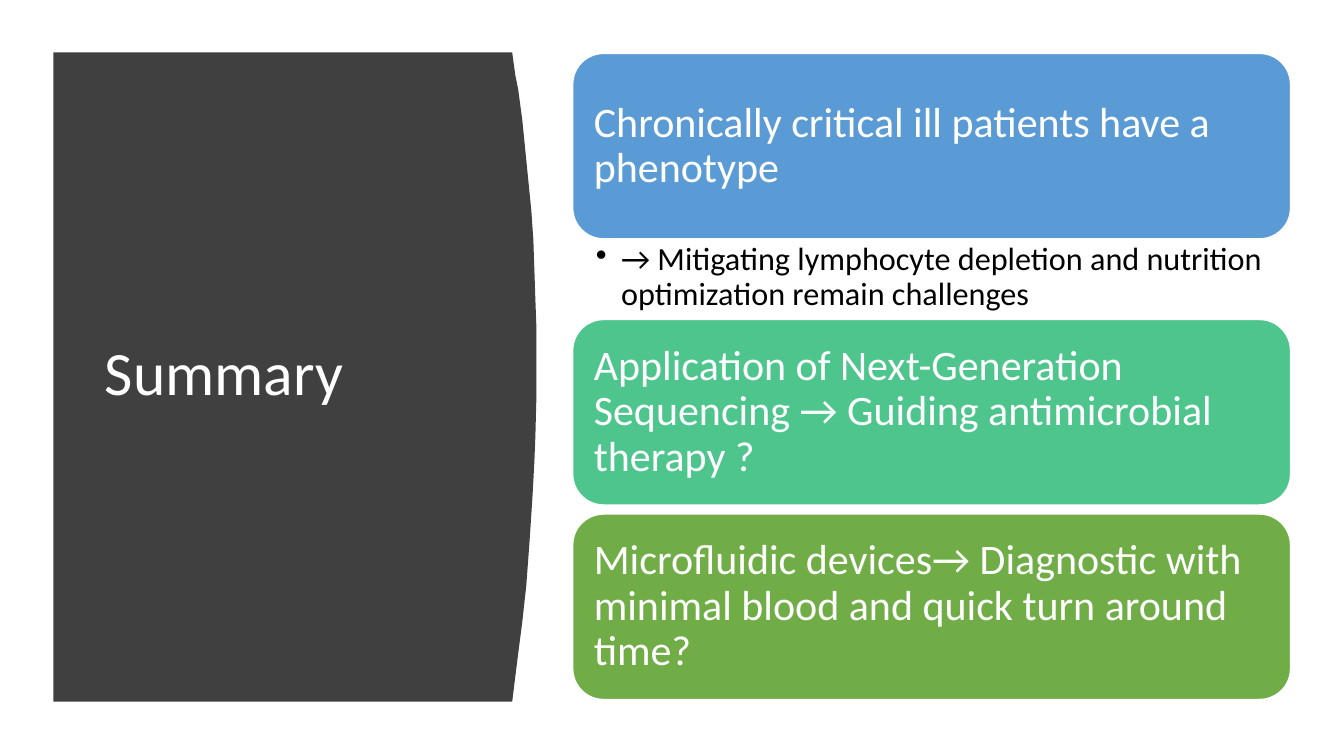
from lxml.etree import SubElement
from pptx import Presentation
from pptx.dml.color import RGBColor
from pptx.enum.shapes import MSO_SHAPE
from pptx.enum.text import MSO_ANCHOR, MSO_AUTO_SIZE, PP_ALIGN
from pptx.oxml.ns import qn
from pptx.util import Inches, Pt

WHITE = RGBColor(0xFF, 0xFF, 0xFF)
BLACK = RGBColor(0x00, 0x00, 0x00)
CHARCOAL = RGBColor(0x40, 0x40, 0x40)
BLUE = RGBColor(0x5B, 0x9B, 0xD5)
TEAL = RGBColor(0x4D, 0xC5, 0x8D)
GREEN = RGBColor(0x70, 0xAD, 0x47)


def set_text(shape, text, size, color, anchor, inset_x, inset_y):
    frame = shape.text_frame
    frame.text = text
    frame.word_wrap = True
    frame.auto_size = MSO_AUTO_SIZE.NONE
    frame.vertical_anchor = anchor
    frame.margin_left = frame.margin_right = Inches(inset_x)
    frame.margin_top = frame.margin_bottom = Inches(inset_y)
    paragraph = frame.paragraphs[0]
    paragraph.alignment = PP_ALIGN.LEFT
    paragraph.line_spacing = 0.9
    font = paragraph.runs[0].font
    font.name, font.size, font.color.rgb = "Calibri", Pt(size), color
    return paragraph


prs = Presentation()
prs.slide_width, prs.slide_height = Inches(13.33), Inches(7.5)
slide = prs.slides.add_slide(prs.slide_layouts.get_by_name("Title Only"))

# Title
title = slide.shapes.title
title.left, title.top = Inches(0.94), Inches(1.11)
title.width, title.height = Inches(3.74), Inches(5.24)
set_text(title, "Summary", 44, WHITE, MSO_ANCHOR.MIDDLE, 0.1, 0.05)

# Dark panel with a bowed right edge, behind the title
bowed_edge = [
    (5.08, 0.52), (5.11, 0.74), (5.14, 0.89), (5.18, 1.19), (5.21, 1.49),
    (5.24, 1.79), (5.27, 2.09), (5.29, 2.38), (5.3, 2.68), (5.31, 2.97),
    (5.32, 3.25), (5.32, 3.94), (5.31, 4.33), (5.3, 4.58), (5.28, 4.95),
    (5.25, 5.4), (5.22, 5.81), (5.18, 6.17), (5.14, 6.48), (5.08, 6.96),
]
outline = [(Inches(x), Inches(y)) for x, y in bowed_edge + [(0.53, 6.96)]]
builder = slide.shapes.build_freeform(Inches(0.53), Inches(0.52))
builder.add_line_segments(outline, close=True)
panel = builder.convert_to_shape()
panel.shadow.inherit = False
panel.fill.solid()
panel.fill.fore_color.rgb = CHARCOAL
panel.line.fill.background()
title.element.addprevious(panel.element)

# Summary cards
card_left, card_width, card_height = Inches(5.68), Inches(7.12), Inches(1.84)
cards = [
    (0.53, BLUE, "Chronically critical ill patients have a phenotype"),
    (3.17, TEAL, "Application of Next-Generation Sequencing → Guiding antimicrobial therapy ?"),
    (5.1, GREEN, "Microfluidic devices→ Diagnostic with minimal blood and quick turn around time?"),
]
for top, color, message in cards:
    card = slide.shapes.add_shape(
        MSO_SHAPE.ROUNDED_RECTANGLE, card_left, Inches(top), card_width, card_height)
    card.shadow.inherit = False
    card.fill.solid()
    card.fill.fore_color.rgb = color
    card.line.color.rgb = WHITE
    card.line.width = Pt(1)
    set_text(card, message, 30, WHITE, MSO_ANCHOR.MIDDLE, 0.12, 0.12)

# Bulleted detail under the first card
detail = slide.shapes.add_textbox(card_left, Inches(2.37), card_width, Inches(0.8))
challenge = set_text(
    detail,
    "→ Mitigating lymphocyte depletion and nutrition optimization remain challenges",
    23, BLACK, MSO_ANCHOR.TOP, 0.23, 0.04)
challenge.level = 1
properties = challenge._p.get_or_add_pPr()
properties.set("marL", str(Inches(0.25)))
properties.set("indent", str(Inches(-0.25)))
SubElement(properties, qn("a:buChar")).set("char", "•")

prs.save("out.pptx")
